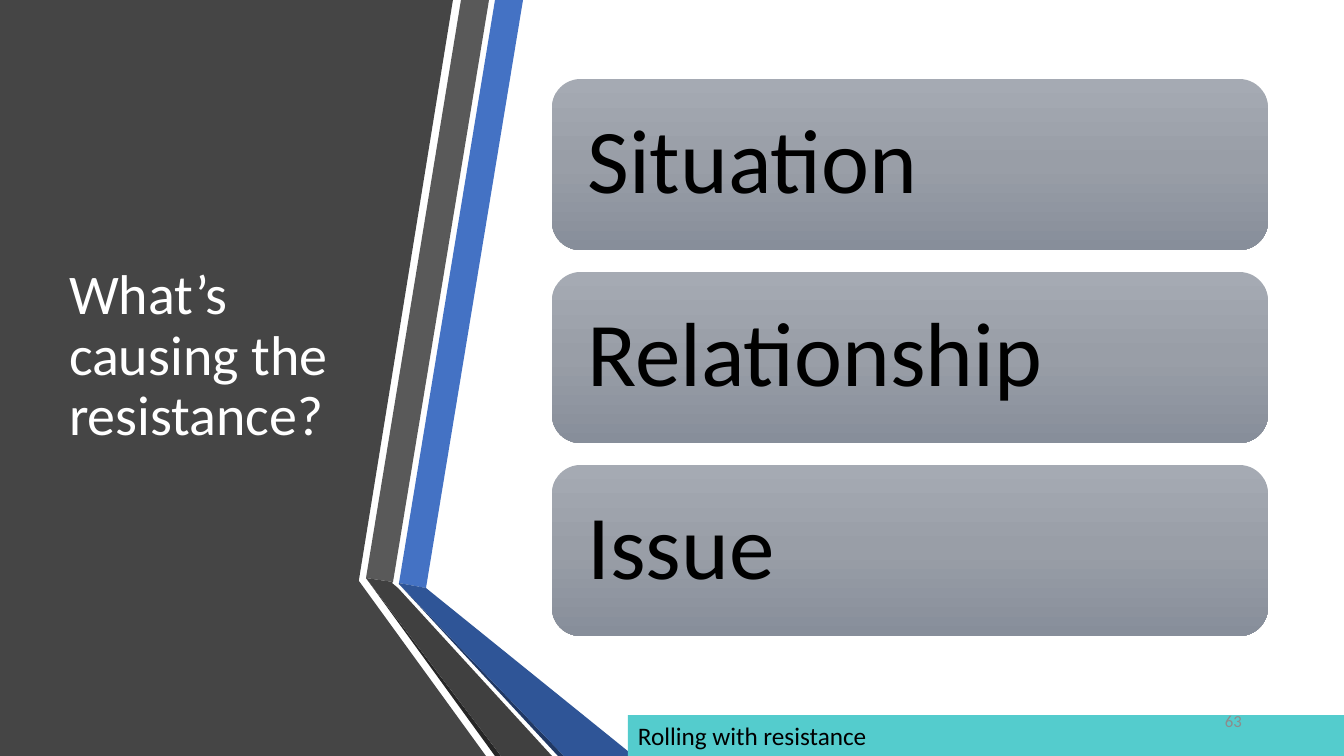
from copy import deepcopy

from pptx import Presentation
from pptx import util as u
from pptx.dml.color import RGBColor
from pptx.enum import shapes, text

# Content
TITLE = "What’s causing the resistance?"
CAUSES = ["Situation", "Relationship", "Issue"]
FOOTER = "Rolling with resistance"
PAGE_NUMBER = "63"

COLORS = {
    "panel": "454545", "blue": "4472C4", "gray": "595959", "black": "262626",
    "navy": "203864", "deep_blue": "2F5597", "dark_gray": "404040",
    "teal": "54CCCD", "white": "FFFFFF", "text": "000000", "number": "8C8C8C",
}
CARD_GRADIENT = [(0, "A5AAB3"), (0.5, "999EA7"), (1, "878E9A")]

# Side panel and folded ribbons, back to front: colour, corners in px
RIBBONS = [
    ("panel", [(0, 0), (453, 0), (359, 580), (359, 581), (486, 756), (0, 756)]),
    ("blue", [(399, 583), (426, 588), (523, 0), (495, 0)]),
    ("gray", [(489, 0), (461, 0), (366, 578), (393, 582)]),
    ("black", [(366, 578), (495, 756), (501, 756)]),
    ("navy", [(399, 584), (558, 756), (564, 756)]),
    ("deep_blue", [(399, 584), (564, 756), (634, 756), (426, 588), (399, 583)]),
    ("dark_gray", [(552, 756), (398, 588), (392, 583), (393, 582), (366, 578),
                   (501, 756)]),
]

# Layout in px
PX = 914400 / 100.8
WIDTH, HEIGHT = 1344, 756
CARD_LEFT, CARD_TOP, CARD_WIDTH, CARD_HEIGHT = 552, 79, 716, 171
CARD_PITCH = 193


def px(*lengths):
    return [u.Emu(round(length * PX)) for length in lengths]


def paint(sp, color):
    sp.shadow.inherit = False
    sp.line.fill.background()
    sp.fill.solid()
    sp.fill.fore_color.rgb = RGBColor.from_string(COLORS[color])


def paint_gradient(sp, stops):
    sp.shadow.inherit = False
    sp.line.fill.background()
    sp.fill.gradient()
    sp.fill.gradient_angle = 270
    first = sp._element.spPr.xpath("a:gradFill/a:gsLst/a:gs")[0]
    first.addnext(deepcopy(first))
    for stop, (position, color) in zip(sp.fill.gradient_stops, stops):
        stop.position = position
        stop.color.rgb = RGBColor.from_string(color)


def write(sp, content, size, color="text", align=text.PP_ALIGN.LEFT,
          anchor=text.MSO_ANCHOR.MIDDLE, spacing=1.0, insets=(10, 5)):
    tf = sp.text_frame
    tf.word_wrap = True
    tf.vertical_anchor = anchor
    side, edge = px(*insets)
    tf.margin_left = tf.margin_right = side
    tf.margin_top = tf.margin_bottom = edge
    p = tf.paragraphs[0]
    p.alignment = align
    p.line_spacing = spacing
    r = p.add_run()
    r.text = content
    r.font.name = "Calibri"
    r.font.size = u.Pt(size)
    r.font.color.rgb = RGBColor.from_string(COLORS[color])


def main():
    prs = Presentation()
    prs.slide_width, prs.slide_height = px(WIDTH, HEIGHT)
    s = prs.slides.add_slide(prs.slide_layouts[6])

    # Side panel and ribbons
    for color, corners in RIBBONS:
        builder = s.shapes.build_freeform(*corners[0], scale=PX)
        builder.add_line_segments(corners[1:], close=True)
        paint(builder.convert_to_shape(), color)

    # Title
    title = s.shapes.add_textbox(*px(59, 76, 306, 562))
    write(title, TITLE, 40, color="white", spacing=0.9)

    # Cause cards
    for i, cause in enumerate(CAUSES):
        card = s.shapes.add_shape(
            shapes.MSO_SHAPE.ROUNDED_RECTANGLE,
            *px(CARD_LEFT, CARD_TOP + i * CARD_PITCH, CARD_WIDTH, CARD_HEIGHT))
        paint_gradient(card, CARD_GRADIENT)
        write(card, cause, 65, spacing=0.9, insets=(27, 27))

    # Footer banner and page number
    banner = s.shapes.add_shape(shapes.MSO_SHAPE.RECTANGLE,
                                *px(628, 715, 716, 41))
    paint(banner, "teal")
    write(banner, FOOTER, 18, anchor=text.MSO_ANCHOR.TOP)
    number = s.shapes.add_textbox(*px(950, 701, 302, 40))
    write(number, PAGE_NUMBER, 12, color="number", align=text.PP_ALIGN.RIGHT)

    prs.save("out.pptx")


if __name__ == "__main__":
    main()
